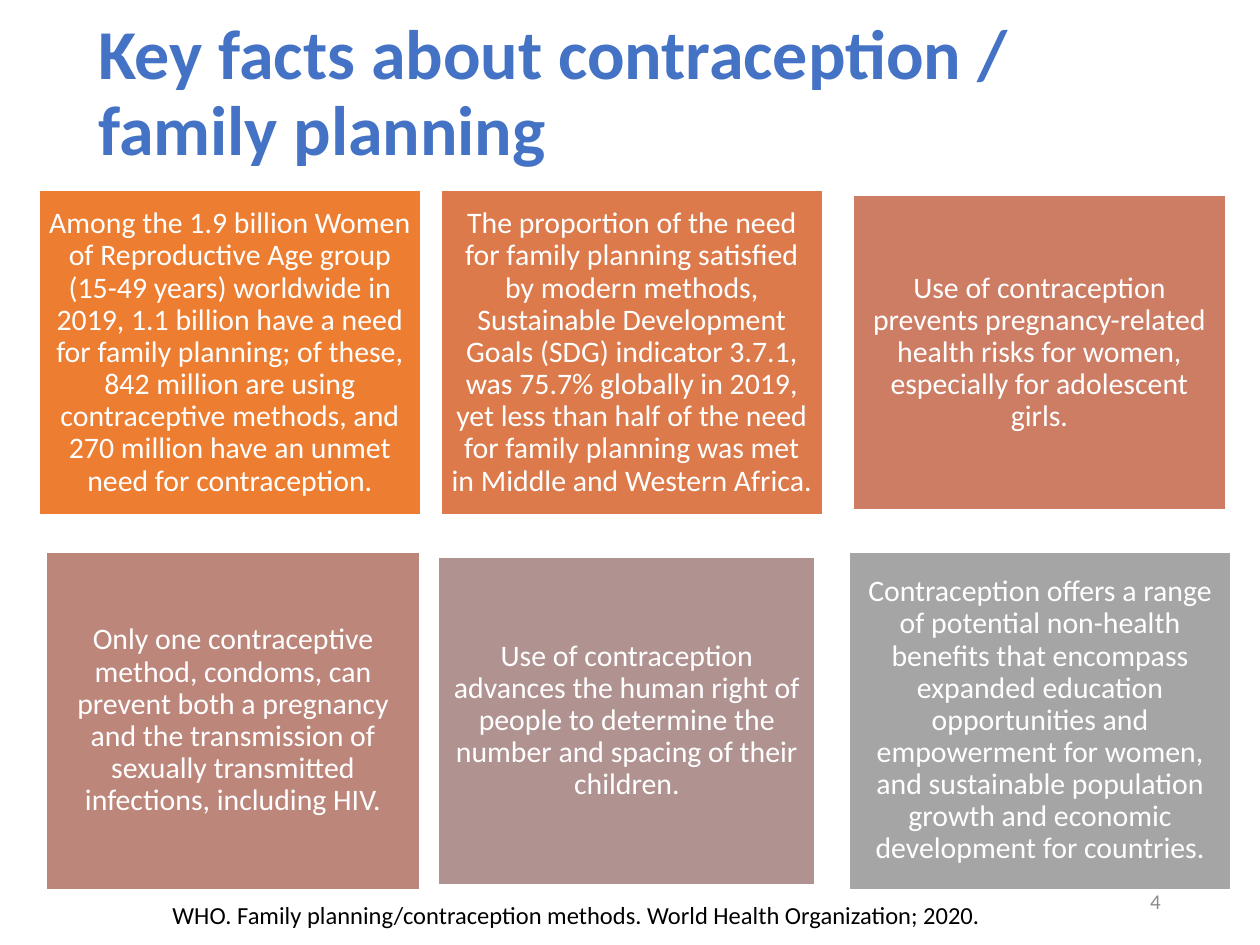
from dataclasses import dataclass

from pptx import Presentation
from pptx.dml.color import RGBColor
from pptx.enum.shapes import MSO_SHAPE
from pptx.enum.text import MSO_ANCHOR, PP_ALIGN
from pptx.util import Inches, Pt


@dataclass(frozen=True)
class Theme:
    font: str = "Calibri"
    title: str = "4472C4"
    white: str = "FFFFFF"
    muted: str = "8C8C8C"
    ink: str = "000000"
    title_size: int = 40
    card_size: int = 17
    source_size: int = 14
    number_size: int = 12


theme = Theme()
deck = Presentation()
deck.slide_width, deck.slide_height = Inches(10), Inches(7.5)
slide = deck.slides.add_slide(deck.slide_layouts[6])

# The grid has 100 columns and 75 rows of square cells.
CELL = deck.slide_width / 100


def grid(*cells):
    return [round(count * CELL) for count in cells]


def write(shape, words, size, color, align=PP_ALIGN.LEFT,
          anchor=MSO_ANCHOR.MIDDLE, spacing=1.0, bold=False):
    frame = shape.text_frame
    frame.word_wrap = True
    frame.vertical_anchor = anchor
    frame.text = words
    paragraph = frame.paragraphs[0]
    paragraph.alignment = align
    paragraph.line_spacing = spacing
    font = paragraph.runs[0].font
    font.name, font.size, font.bold = theme.font, Pt(size), bold
    font.color.rgb = RGBColor.from_string(color)


heading = slide.shapes.add_textbox(*grid(6.8, 1.9, 85.6, 11.3))
write(heading, "Key facts about contraception / family planning",
      theme.title_size, theme.title, spacing=0.9, bold=True)

# Each row of facts is centred on one line: (left, width, height, fill, words)
fact_rows = {
    28: [
        (3.1, 30.3, 25.8, "ED7D31",
         "Among the 1.9 billion Women of Reproductive Age group (15-49 years) "
         "worldwide in 2019, 1.1 billion have a need for family planning; of "
         "these, 842 million are using contraceptive methods, and 270 million "
         "have an unmet need for contraception."),
        (35, 30.3, 25.8, "DC7A4B",
         "The proportion of the need for family planning satisfied by modern "
         "methods, Sustainable Development Goals (SDG) indicator 3.7.1, was "
         "75.7% globally in 2019, yet less than half of the need for family "
         "planning was met in Middle and Western Africa."),
        (67.7, 29.6, 25, "CC7D64",
         "Use of contraception prevents pregnancy-related health risks for "
         "women, especially for adolescent girls."),
    ],
    57.2: [
        (3.7, 29.6, 26.8, "BD867B",
         "Only one contraceptive method, condoms, can prevent both a pregnancy "
         "and the transmission of sexually transmitted infections, including "
         "HIV."),
        (34.8, 29.9, 26, "B09391",
         "Use of contraception advances the human right of people to determine "
         "the number and spacing of their children."),
        (67.4, 30.3, 26.8, "A5A5A5",
         "Contraception offers a range of potential non-health benefits that "
         "encompass expanded education opportunities and empowerment for women, "
         "and sustainable population growth and economic development for "
         "countries."),
    ],
}

for middle, facts in fact_rows.items():
    for left, width, height, fill, words in facts:
        card = slide.shapes.add_shape(
            MSO_SHAPE.RECTANGLE, *grid(left, middle - height / 2, width, height))
        card.shadow.inherit = False
        card.fill.solid()
        card.fill.fore_color.rgb = RGBColor.from_string(fill)
        card.line.color.rgb = RGBColor.from_string(theme.white)
        card.line.width = Pt(1)
        frame = card.text_frame
        frame.margin_left = frame.margin_right = Inches(0.07)
        frame.margin_top = frame.margin_bottom = Inches(0.07)
        write(card, words, theme.card_size, theme.white,
              align=PP_ALIGN.CENTER, spacing=0.9)
        frame.paragraphs[0].space_after = Pt(6)

page_number = slide.shapes.add_textbox(*grid(70.6, 69.5, 22.5, 4))
write(page_number, "4", theme.number_size, theme.muted, align=PP_ALIGN.RIGHT)

source = slide.shapes.add_textbox(*grid(12.7, 70.9, 87.3, 3.4))
write(source,
      "WHO. Family planning/contraception methods. World Health Organization; 2020.",
      theme.source_size, theme.ink, anchor=MSO_ANCHOR.TOP)

deck.save("out.pptx")
